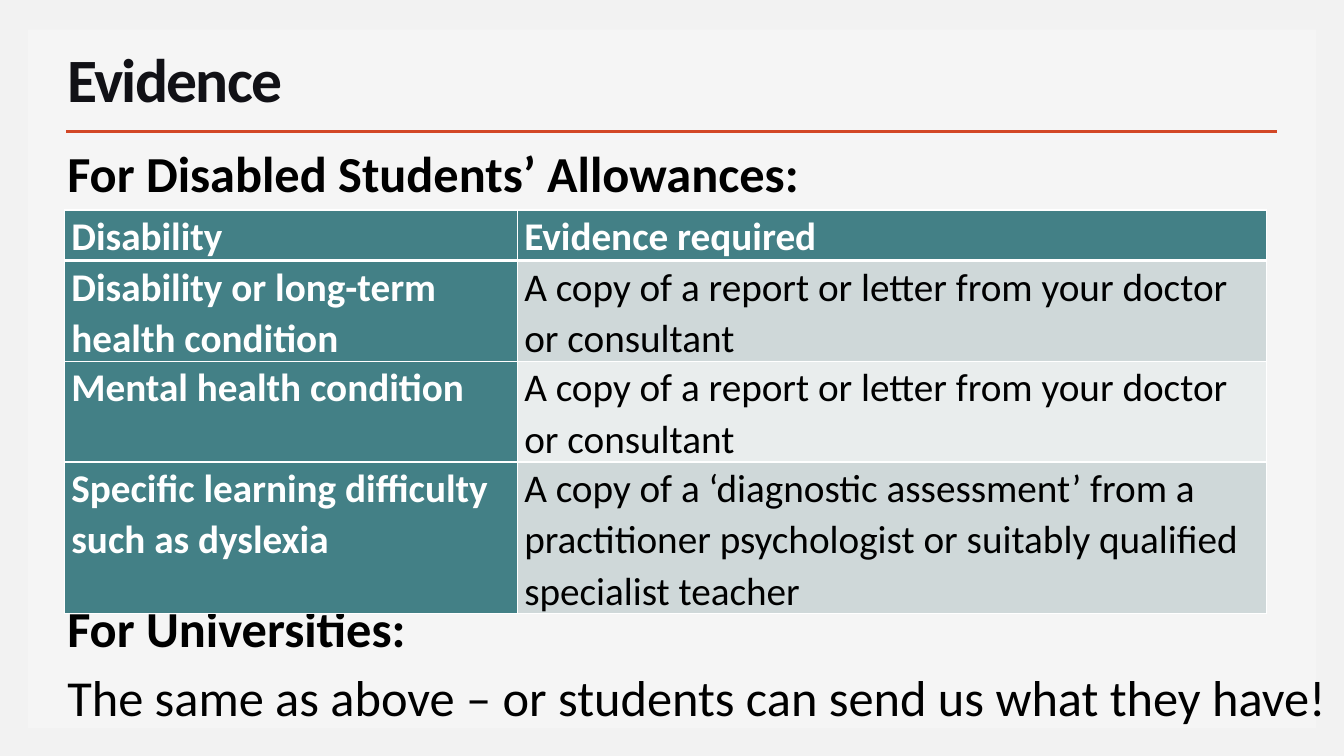
from lxml.etree import SubElement
from pptx import Presentation
from pptx.dml.color import RGBColor
from pptx.enum.shapes import MSO_CONNECTOR as Connector, MSO_SHAPE as Shape
from pptx.enum.text import MSO_ANCHOR as Anchor
from pptx.oxml.ns import qn
from pptx.util import Pt

COLORS = {
    "background": "F2F2F2", "panel": "F5F5F5", "rule": "D24726",
    "title": "111116", "black": "000000", "white": "FFFFFF",
    "teal": "438086", "band_dark": "CFD8D9", "band_light": "E9EDED",
}
LEFT = 41
COLUMN_WIDTHS = [323.5, 535]
ROW_HEIGHTS = [35, 72, 72, 108]
EVIDENCE = [
    ("Disability", "Evidence required"),
    ("Disability or long-term health condition",
     "A copy of a report or letter from your doctor or consultant"),
    ("Mental health condition",
     "A copy of a report or letter from your doctor or consultant"),
    ("Specific learning difficulty such as dyslexia",
     "A copy of a ‘diagnostic assessment’ from a practitioner psychologist "
     "or suitably qualified specialist teacher"),
]


def rgb(name):
    return RGBColor.from_string(COLORS[name])


class SlideBuilder:
    font = "Calibri"

    def __init__(self, slide):
        self.slide = slide
        slide.background.fill.solid()
        slide.background.fill.fore_color.rgb = rgb("background")

    def panel(self, left, top, width, height):
        shape = self.slide.shapes.add_shape(
            Shape.RECTANGLE, Pt(left), Pt(top), Pt(width), Pt(height))
        shape.shadow.inherit = False
        shape.fill.solid()
        shape.fill.fore_color.rgb = rgb("panel")
        shape.line.fill.background()

    def rule(self, left, right, y):
        line = self.slide.shapes.add_connector(
            Connector.STRAIGHT, Pt(left), Pt(y), Pt(right), Pt(y))
        line.line.color.rgb = rgb("rule")
        line.line.width = Pt(2)
        SubElement(line._element.spPr, qn("a:effectLst"))

    def format_paragraph(self, paragraph, size, color, bold, after, spacing=1.0):
        paragraph.space_after = Pt(after)
        paragraph.line_spacing = spacing
        for run in paragraph.runs:
            run.font.name = self.font
            run.font.size = Pt(size)
            run.font.bold = bold
            run.font.color.rgb = rgb(color)

    def text_box(self, left, top, width, height, lines):
        """Add a wrapped box; lines holds (text, bold) pairs."""
        box = self.slide.shapes.add_textbox(
            Pt(left), Pt(top), Pt(width), Pt(height))
        frame = box.text_frame
        frame.word_wrap = True
        frame.text = "\n".join(text for text, _ in lines)
        for paragraph, (_, bold) in zip(frame.paragraphs, lines):
            self.format_paragraph(paragraph, 36, "black", bold, 6)
        return frame

    def title(self, text, left, top, width, height):
        frame = self.text_box(left, top, width, height, [(text, True)])
        frame.vertical_anchor = Anchor.BOTTOM
        paragraph = frame.paragraphs[0]
        self.format_paragraph(paragraph, 44, "title", True, 0, 0.85)
        paragraph.runs[0].font._element.set("spc", "-120")

    def cell_borders(self, cell, widths):
        """Draw white borders; widths maps a:lnL, a:lnR, a:lnT, a:lnB to points."""
        properties = cell._tc.get_or_add_tcPr()
        for position, (tag, width) in enumerate(widths.items()):
            border = SubElement(properties, qn(tag), w=str(Pt(width)))
            fill = SubElement(border, qn("a:solidFill"))
            SubElement(fill, qn("a:srgbClr"), val=COLORS["white"])
            properties.insert(position, border)

    def table(self, left, top, rows):
        table = self.slide.shapes.add_table(
            len(rows), len(COLUMN_WIDTHS), Pt(left), Pt(top),
            Pt(sum(COLUMN_WIDTHS)), Pt(sum(ROW_HEIGHTS))).table
        for column, width in zip(table.columns, COLUMN_WIDTHS):
            column.width = Pt(width)
        for row, height in zip(table.rows, ROW_HEIGHTS):
            row.height = Pt(height)
        for r, row in enumerate(rows):
            for c, text in enumerate(row):
                heading = r == 0 or c == 0
                band = "band_dark" if r % 2 else "band_light"
                cell = table.cell(r, c)
                cell.text_frame.text = text
                cell.margin_left = cell.margin_right = Pt(5)
                cell.margin_top = cell.margin_bottom = Pt(0)
                cell.fill.solid()
                cell.fill.fore_color.rgb = rgb("teal" if heading else band)
                self.format_paragraph(
                    cell.text_frame.paragraphs[0], 28,
                    "white" if heading else "black", heading, 8, 1.07)
                self.cell_borders(cell, {
                    "a:lnL": 1, "a:lnR": 1,
                    "a:lnT": 3 if r == 1 else 1,
                    "a:lnB": 3 if r == 0 else 1})


def main():
    presentation = Presentation()
    presentation.slide_width, presentation.slide_height = Pt(960), Pt(540)
    builder = SlideBuilder(
        presentation.slides.add_slide(presentation.slide_layouts[6]))
    builder.panel(20, 21, 920, 499)
    builder.rule(47.5, 912, 94)
    builder.title("Evidence", LEFT, 35, 868, 50.5)
    builder.text_box(LEFT, 98, 916, 57,
                     [("For Disabled Students’ Allowances:", True)])
    builder.text_box(LEFT, 423, 916, 104, [
        ("For Universities:", True),
        ("The same as above – or students can send us what they have!", False)])
    builder.table(46, 150, EVIDENCE)
    presentation.save("out.pptx")


if __name__ == "__main__":
    main()
